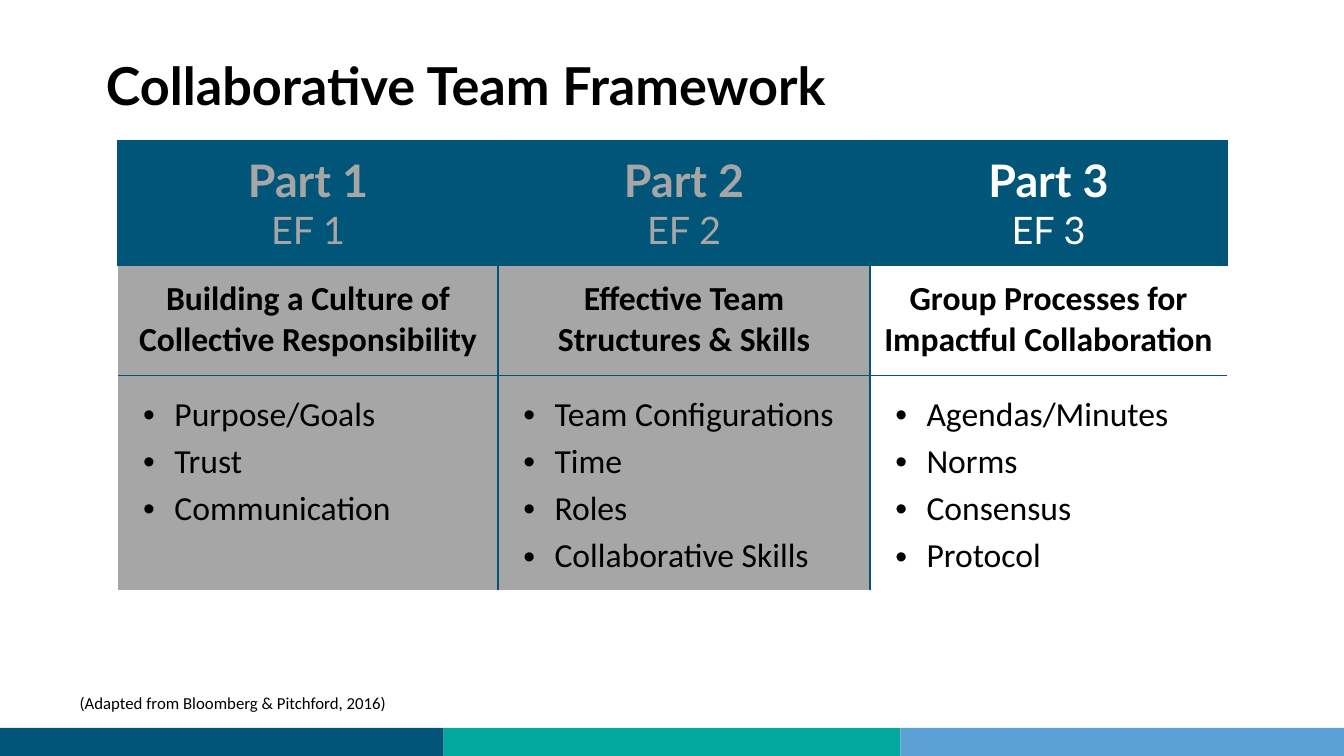
from dataclasses import dataclass

from lxml.etree import SubElement
from pptx import Presentation
from pptx.dml.color import RGBColor
from pptx.enum.shapes import MSO_SHAPE as Shape
from pptx.enum.text import MSO_ANCHOR as Anchor, MSO_AUTO_SIZE as AutoSize, PP_ALIGN as Align
from pptx.oxml.ns import qn
from pptx.util import Inches, Pt


@dataclass(frozen=True)
class Theme:
    """Colours, fonts and type sizes of the slide."""
    navy: str = "005579"
    teal: str = "00A89E"
    sky: str = "5CA1D6"
    grey: str = "A6A6A6"
    white: str = "FFFFFF"
    black: str = "000000"
    heading_font: str = "Lato"
    body_font: str = "Calibri"
    title_size: float = 37.3
    heading_size: float = 32
    factor_size: float = 27
    body_size: float = 24
    source_size: float = 12


THEME = Theme()
INSET = 0.13
NO_STYLE = "{2D5ABB26-0587-4C30-8999-92F81FD0307C}"
COLUMN_WIDTHS = (3.77, 3.69, 3.54)
ROW_HEIGHTS = (1.24, 1.09, 2.11)
PARTS = (
    ("Part 1", "EF 1", ("Building a Culture of", "Collective Responsibility"),
     ("Purpose/Goals", "Trust", "Communication"), False),
    ("Part 2", "EF 2", ("Effective Team", "Structures & Skills"),
     ("Team Configurations", "Time", "Roles", "Collaborative Skills"), False),
    ("Part 3", "EF 3", ("Group Processes for Impactful Collaboration",),
     ("Agendas/Minutes", "Norms", "Consensus", "Protocol"), True),
)


def write(paragraph, text, size, font=THEME.body_font, color=THEME.black,
          bold=False, align=Align.LEFT, bullet=False):
    """Write formatted text into a paragraph."""
    paragraph.alignment = align
    run = paragraph.add_run()
    run.text = text
    run.font.size = Pt(size)
    run.font.name = font
    run.font.bold = bold
    run.font.color.rgb = RGBColor.from_string(color)
    if bullet:
        paragraph.line_spacing = 1.15
        properties = paragraph._p.get_or_add_pPr()
        properties.set("marL", str(Inches(0.43)))
        properties.set("indent", str(Inches(-0.31)))
        tint = SubElement(properties, qn("a:buClr"))
        SubElement(tint, qn("a:srgbClr"), val=color)
        SubElement(properties, qn("a:buFont"), typeface="Arial")
        SubElement(properties, qn("a:buChar"), char="•")


def pad(holder, vertical=INSET):
    """Set the inner margins of a text frame or cell."""
    holder.margin_left = holder.margin_right = Inches(INSET)
    holder.margin_top = holder.margin_bottom = Inches(vertical)


def place(shape, box):
    """Move a shape to a box given in inches."""
    shape.left, shape.top, shape.width, shape.height = map(Inches, box)


def add_title(slide, box):
    """Fill the title placeholder."""
    title = slide.shapes.title
    place(title, box)
    frame = title.text_frame
    pad(frame)
    frame.auto_size = AutoSize.NONE
    frame.vertical_anchor = Anchor.TOP
    write(frame.paragraphs[0], "Collaborative Team Framework", THEME.title_size,
          font=THEME.heading_font, bold=True)


def add_color_band(slide, box):
    """Draw the three-colour band along the bottom edge."""
    left, top, width, height = box
    side = 4.4
    middle = width - 2 * side
    for color, segment in ((THEME.navy, side), (THEME.teal, middle), (THEME.sky, side)):
        bar = slide.shapes.add_shape(Shape.RECTANGLE, *map(Inches, (left, top, segment, height)))
        bar.shadow.inherit = False
        bar.fill.solid()
        bar.fill.fore_color.rgb = RGBColor.from_string(color)
        bar.line.fill.background()
        left += segment


def style_cell(cell, fill, sides):
    """Set a cell's margins, borders and fill."""
    pad(cell)
    cell.vertical_anchor = Anchor.TOP
    properties = cell._tc.get_or_add_tcPr()
    for side in "LRTB":
        if side in sides:
            line = SubElement(properties, qn(f"a:ln{side}"), w=str(Pt(1)))
            paint = SubElement(line, qn("a:solidFill"))
            SubElement(paint, qn("a:srgbClr"), val=THEME.navy)
    if fill:
        cell.fill.solid()
        cell.fill.fore_color.rgb = RGBColor.from_string(fill)
    else:
        cell.fill.background()


def fill_cell(cell, lines):
    """Write one paragraph for each text and format pair."""
    frame = cell.text_frame
    for index, (text, style) in enumerate(lines):
        paragraph = frame.add_paragraph() if index else frame.paragraphs[0]
        write(paragraph, text, **style)


def add_framework(slide, box):
    """Draw the table of parts, with the current one highlighted."""
    table = slide.shapes.add_table(
        len(ROW_HEIGHTS), len(PARTS), *map(Inches, box)).table
    table.horz_banding = table.first_row = False
    table._tbl.tblPr.find(qn("a:tableStyleId")).text = NO_STYLE
    for column, width in zip(table.columns, COLUMN_WIDTHS):
        column.width = Inches(width)
    for row, height in zip(table.rows, ROW_HEIGHTS):
        row.height = Inches(height)
    for index, (label, factor, subject, topics, current) in enumerate(PARTS):
        heading_style = dict(font=THEME.heading_font, align=Align.CENTER,
                             color=THEME.white if current else THEME.grey)
        subject_style = dict(size=THEME.body_size, bold=True, align=Align.CENTER)
        topic_style = dict(size=THEME.body_size, bullet=True)
        shade = None if current else THEME.grey
        inner = ("L" if index else "") + ("R" if index < len(PARTS) - 1 else "")
        rows = (
            (THEME.navy, "LRT", [
                (label, dict(heading_style, size=THEME.heading_size, bold=True)),
                (factor, dict(heading_style, size=THEME.factor_size))]),
            (shade, inner + "B", [(text, subject_style) for text in subject]),
            (shade, inner + "T", [(text, topic_style) for text in topics]),
        )
        for row, (fill, sides, lines) in enumerate(rows):
            cell = table.cell(row, index)
            style_cell(cell, fill, sides)
            fill_cell(cell, lines)


def add_source(slide, box):
    """Add the source line."""
    frame = slide.shapes.add_textbox(*map(Inches, box)).text_frame
    frame.word_wrap = True
    frame.auto_size = AutoSize.SHAPE_TO_FIT_TEXT
    pad(frame, vertical=0.07)
    write(frame.paragraphs[0], "(Adapted from Bloomberg & Pitchford, 2016)",
          THEME.source_size)


def main():
    """Build and save the slide."""
    deck = Presentation()
    deck.slide_width, deck.slide_height = Inches(13.33), Inches(7.5)
    slide = deck.slides.add_slide(deck.slide_layouts[5])
    add_color_band(slide, (0, 7.22, 13.33, 0.28))
    add_title(slide, (0.92, 0.4, 11.5, 1.2))
    add_framework(slide, (1.17, 1.39, sum(COLUMN_WIDTHS), sum(ROW_HEIGHTS)))
    add_source(slide, (0.66, 6.8, 11.43, 0.34))
    deck.save("out.pptx")


if __name__ == "__main__":
    main()
